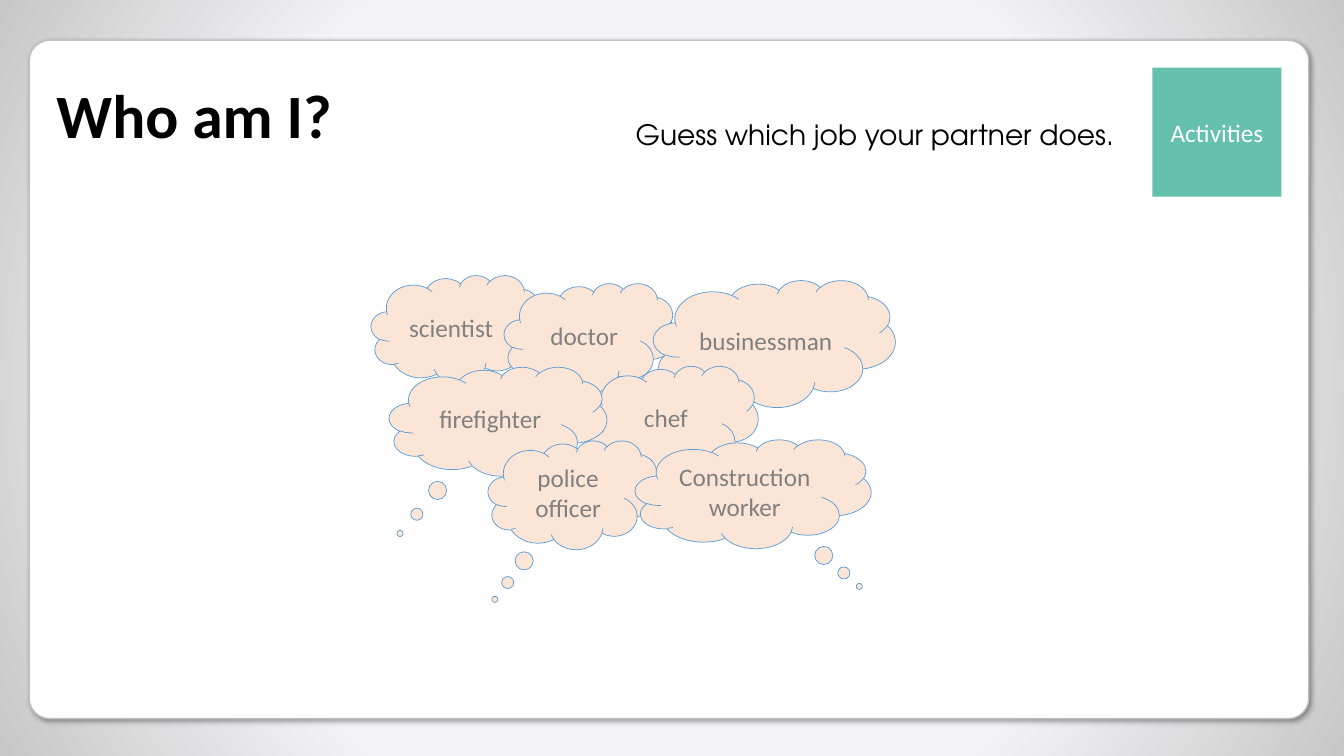
from lxml import etree
from pptx import Presentation
from pptx.dml.color import RGBColor
from pptx.enum.shapes import MSO_SHAPE as Shape
from pptx.enum.text import MSO_ANCHOR as Anchor, MSO_AUTO_SIZE as AutoSize, PP_ALIGN as Align
from pptx.oxml import parse_xml
from pptx.oxml.ns import nsdecls, qn
from pptx.util import Inches, Pt

SLIDE_SIZE = (13.33, 7.5)
JOBS = [
    ("scientist", (3.68, 2.73, 1.71, 1.08), (0.22, 0.76)),
    ("doctor", (5, 2.81, 1.71, 1.08), (0.31, 0.72)),
    ("businessman", (6.48, 2.78, 2.4, 1.26), (-0.2, 0.28)),
    ("chef", (5.81, 3.63, 1.71, 1.08), (-0.37, 0.65)),
    ("firefighter", (3.86, 3.64, 2.16, 1.08), (-0.45, 1.03)),
    ("police officer", (4.84, 4.37, 1.71, 1.08), (-0.46, 0.96)),
    ("Construction worker", (6.3, 4.36, 2.34, 1.08), (0.45, 0.85)),
]


def color(value):
    """Turn a hex string into a colour."""
    return RGBColor.from_string(value)


def write(shape, text, size, ink, align, font="Calibri", bold=False):
    """Put one formatted paragraph into a shape."""
    frame = shape.text_frame
    frame.word_wrap = True
    frame.text = text
    para = frame.paragraphs[0]
    para.alignment = align
    span = para.runs[0].font
    span.name, span.size, span.bold = font, Pt(size), bold
    span.color.rgb = color(ink)


def add_block(page, kind, box, fill, line=None, width=1):
    """Add a flat preset shape with an optional outline."""
    shape = page.shapes.add_shape(kind, *map(Inches, box))
    shape.shadow.inherit = False
    shape.fill.solid()
    shape.fill.fore_color.rgb = color(fill)
    if line:
        shape.line.color.rgb = color(line)
        shape.line.width = Pt(width)
    else:
        shape.line.fill.background()
    return shape


def add_backdrop(page, box):
    """Fill the box with a radial grey gradient."""
    backdrop = add_block(page, Shape.RECTANGLE, box, "F4F4F6")
    gradient = parse_xml(
        f'<a:gradFill {nsdecls("a")} rotWithShape="1"><a:gsLst>'
        '<a:gs pos="61000"><a:srgbClr val="F4F4F6"/></a:gs>'
        '<a:gs pos="100000"><a:srgbClr val="C7C7C7"/></a:gs></a:gsLst>'
        '<a:path path="circle"><a:fillToRect l="50000" t="50000" r="50000" b="50000"/></a:path>'
        '</a:gradFill>')
    properties = backdrop.element.spPr
    properties.replace(properties.find(qn("a:solidFill")), gradient)


def add_card(page, box):
    """Add the white rounded card with its soft shadow."""
    card = add_block(page, Shape.ROUNDED_RECTANGLE, box, "FFFFFF", "BFBFBF")
    card.adjustments[0] = 0.03
    effects = card.element.spPr.find(qn("a:effectLst"))
    shadow = etree.SubElement(effects, qn("a:outerShdw"), blurRad=str(Pt(4)), dist=str(Pt(3)),
                              dir="2700000", algn="tl", rotWithShape="0")
    shade = etree.SubElement(shadow, qn("a:srgbClr"), val="000000")
    etree.SubElement(shade, qn("a:alpha"), val="40000")


def add_header(page, box):
    """Place the title, the instruction and the section tag in the box."""
    left, top, width, height = box
    side = 1.28
    tag = add_block(page, Shape.RECTANGLE,
                    (left + width - side, top + height - side, side, side), "65C0AD")
    tag.text_frame.vertical_anchor = Anchor.MIDDLE
    write(tag, "Activities", 18, "FFFFFF", Align.CENTER)

    title = page.shapes.title
    title.left, title.top, title.width, title.height = map(Inches, (left, top, 10.83, height))
    write(title, "Who am I?", 44, "000000", Align.LEFT, bold=True)
    title.text_frame.auto_size = AutoSize.NONE
    title.text_frame.vertical_anchor = Anchor.MIDDLE
    title.text_frame.paragraphs[0].line_spacing = 0.9
    page.shapes.element.append(title.element)

    task = page.shapes.add_textbox(*map(Inches, (left + 5.24, top + 0.72, 5.45, 0.44)))
    write(task, "Guess which job your partner does.", 20, "000000", Align.RIGHT,
          "TeX Gyre Adventor")


def add_cloud(page, job, box, tail):
    """Add one thought cloud whose tail is given relative to its box."""
    cloud = add_block(page, Shape.CLOUD_CALLOUT, box, "FBE5D6", "5B9BD5", 0.5)
    cloud.adjustments[0], cloud.adjustments[1] = tail
    cloud.text_frame.vertical_anchor = Anchor.MIDDLE
    write(cloud, job, 18, "808080", Align.CENTER)


def main():
    """Build and save the slide."""
    deck = Presentation()
    deck.slide_width, deck.slide_height = map(Inches, SLIDE_SIZE)
    page = deck.slides.add_slide(deck.slide_layouts[5])
    add_backdrop(page, (0, 0, *SLIDE_SIZE))
    add_card(page, (0.29, 0.4, 12.69, 6.73))
    add_header(page, (0.46, 0.4, 12.25, 1.55))
    for job, box, tail in JOBS:
        add_cloud(page, job, box, tail)
    deck.save("out.pptx")


if __name__ == "__main__":
    main()
